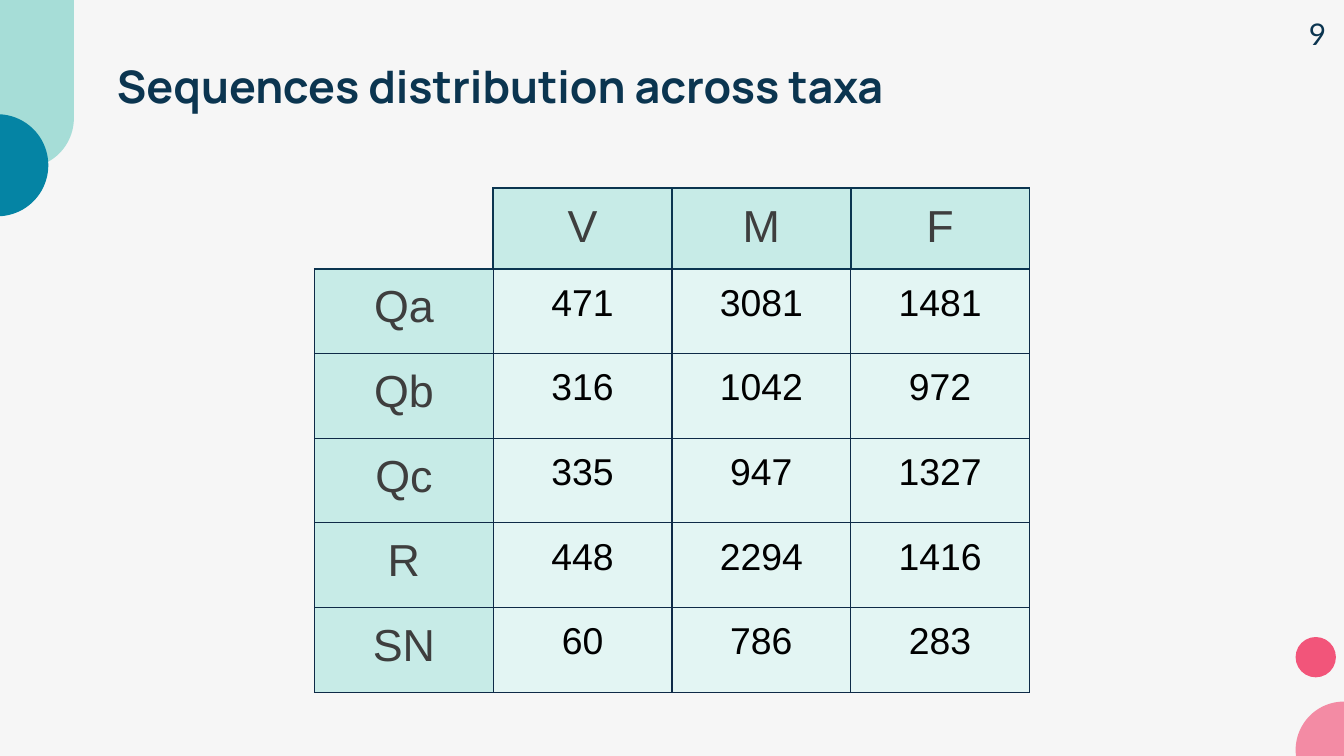
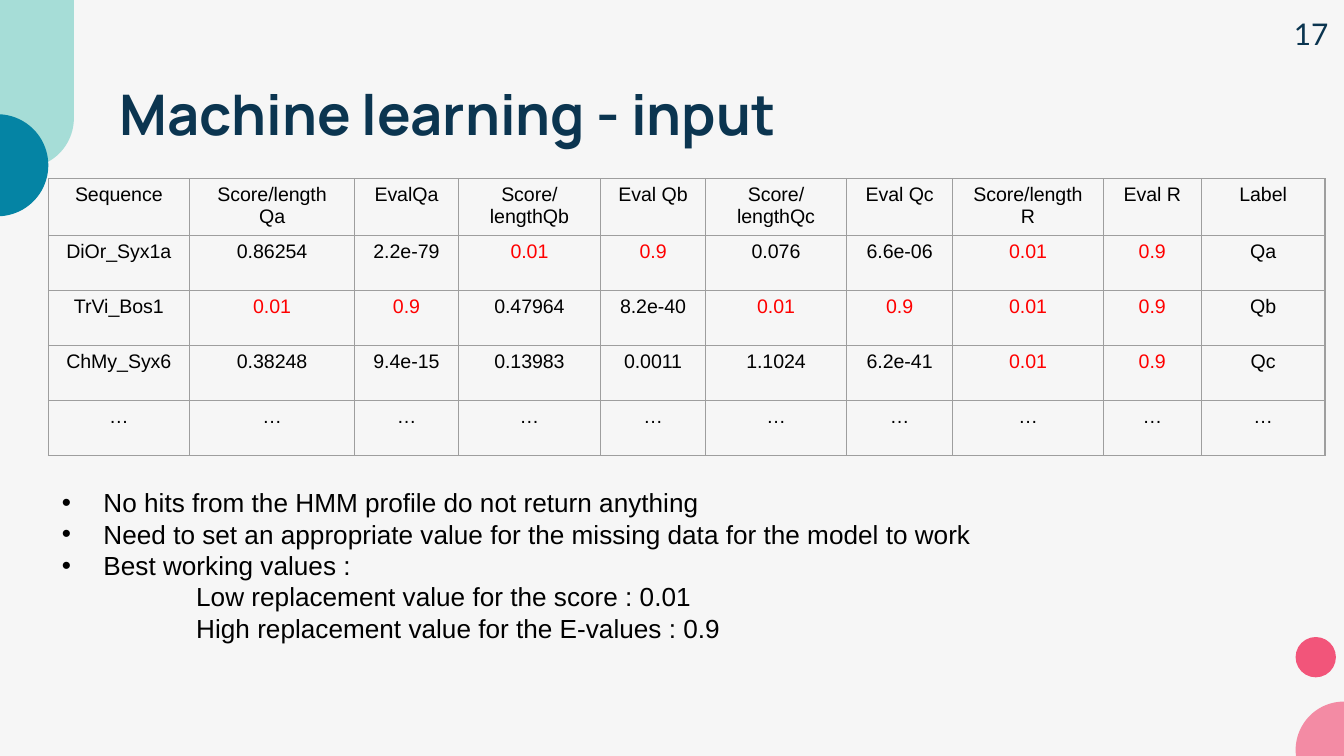
from dataclasses import dataclass
from typing import Optional

from lxml import etree
from pptx import Presentation
from pptx.dml.color import RGBColor
from pptx.enum.shapes import MSO_SHAPE
from pptx.enum.text import MSO_ANCHOR, MSO_AUTO_SIZE, PP_ALIGN
from pptx.oxml.ns import qn
from pptx.slide import Slide
from pptx.table import Table, _Cell
from pptx.text.text import _Paragraph
from pptx.util import Inches, Pt

ELLIPSE = MSO_SHAPE.OVAL
ROUNDED = MSO_SHAPE.ROUNDED_RECTANGLE
CHORD = MSO_SHAPE.CHORD
TOP = MSO_ANCHOR.TOP
LEFT = PP_ALIGN.LEFT
CENTER = PP_ALIGN.CENTER
NO_AUTOFIT = MSO_AUTO_SIZE.NONE
TITLE_AND_CONTENT, TITLE_ONLY = 1, 5
EDGES = ("lnL", "lnR", "lnT", "lnB")


@dataclass(frozen=True)
class Theme:
    background: str = "F6F6F6"
    navy: str = "0B3550"
    grid_navy: str = "0E2A47"
    grid_gray: str = "9E9E9E"
    mint: str = "74CEC4"
    teal: str = "0584A4"
    pink: str = "F2557A"
    header_fill: str = "C7EBE7"
    value_fill: str = "E3F5F3"
    header_text: str = "3E3E3E"
    black: str = "000000"
    red: str = "FF0000"
    title_font: str = "Manrope"
    body_font: str = "Arial"
    number_font: str = "Lato"
    small_title: float = 24
    large_title: float = 30
    taxa_header: float = 24
    taxa_value: float = 20
    input_cell: float = 10.5
    body: float = 14
    page_number: float = 16


THEME = Theme()


@dataclass(frozen=True)
class Box:
    left: float
    top: float
    width: float
    height: float

    def lengths(self) -> tuple:
        return tuple(Inches(v) for v in (self.left, self.top, self.width, self.height))


@dataclass(frozen=True)
class Decoration:
    kind: int
    box: Box
    color: str
    opacity: int = 100
    adjustments: tuple = ()


@dataclass(frozen=True)
class TextStyle:
    font: str
    size: float
    color: str
    bold: bool = False


@dataclass(frozen=True)
class Border:
    color: str
    width: float


@dataclass(frozen=True)
class Heading:
    text: str
    box: Box
    size: float
    top_inset: float


DECORATIONS = (
    Decoration(ELLIPSE, Box(9.64, 4.74, 0.3, 0.3), THEME.pink),
    Decoration(ROUNDED, Box(-0.19, -0.75, 0.74, 2), THEME.mint, 61, (0.5,)),
    Decoration(CHORD, Box(-0.4, 0.85, 0.76, 0.76), THEME.teal, 100, (162, 54)),
    Decoration(ELLIPSE, Box(9.64, 5.22, 0.72, 0.72), THEME.pink, 66),
)

TAXA_ROWS = (
    ("", "V", "M", "F"),
    ("Qa", "471", "3081", "1481"),
    ("Qb", "316", "1042", "972"),
    ("Qc", "335", "947", "1327"),
    ("R", "448", "2294", "1416"),
    ("SN", "60", "786", "283"),
)

MISSING_VALUES = ("0.01", "0.9")
INPUT_WIDTHS = (1.05, 1.23, 0.77, 1.06, 0.78, 1.05, 0.79, 1.12, 0.73, 0.92)
INPUT_ROWS = (
    ("Sequence", "Score/length Qa", "EvalQa", "Score/lengthQb", "Eval Qb",
     "Score/lengthQc", "Eval Qc", "Score/length R", "Eval R", "Label"),
    ("DiOr_Syx1a", "0.86254", "2.2e-79", "0.01", "0.9",
     "0.076", "6.6e-06", "0.01", "0.9", "Qa"),
    ("TrVi_Bos1", "0.01", "0.9", "0.47964", "8.2e-40",
     "0.01", "0.9", "0.01", "0.9", "Qb"),
    ("ChMy_Syx6", "0.38248", "9.4e-15", "0.13983", "0.0011",
     "1.1024", "6.2e-41", "0.01", "0.9", "Qc"),
    ("…",) * len(INPUT_WIDTHS),
)

FINDINGS = (
    "No hits from the HMM profile do not return anything",
    "Need to set an appropriate value for the missing data for the model to work",
    "Best working values :",
)
REPLACEMENTS = (
    "Low replacement value for the score : 0.01",
    "High replacement value for the E-values : 0.9",
)


def style_paragraph(paragraph: _Paragraph, style: TextStyle, alignment: int = LEFT) -> None:
    paragraph.alignment = alignment
    font = paragraph.font
    font.name = style.font
    font.size = Pt(style.size)
    font.bold = style.bold
    font.color.rgb = RGBColor.from_string(style.color)


def draw_decoration(slide: Slide, decoration: Decoration) -> None:
    shape = slide.shapes.add_shape(decoration.kind, *decoration.box.lengths())
    shape.shadow.inherit = False
    shape.line.fill.background()
    shape.fill.solid()
    shape.fill.fore_color.rgb = RGBColor.from_string(decoration.color)
    for index, value in enumerate(decoration.adjustments):
        shape.adjustments[index] = value
    if decoration.opacity < 100:
        color = shape.fill._xPr.find(f".//{qn('a:srgbClr')}")
        etree.SubElement(color, qn("a:alpha"), val=str(decoration.opacity * 1000))


def place(shape, box: Box) -> None:
    shape.left, shape.top, shape.width, shape.height = box.lengths()


def add_page(presentation, layout: int, heading: Heading, number: str, number_box: Box) -> Slide:
    slide = presentation.slides.add_slide(presentation.slide_layouts[layout])
    for decoration in DECORATIONS:
        draw_decoration(slide, decoration)

    title = slide.shapes.title
    place(title, heading.box)
    frame = title.text_frame
    frame.text = heading.text
    frame.auto_size = NO_AUTOFIT
    frame.vertical_anchor = TOP
    frame.margin_top = Inches(heading.top_inset)
    style_paragraph(frame.paragraphs[0],
                    TextStyle(THEME.title_font, heading.size, THEME.navy, True))

    number_frame = slide.shapes.add_textbox(*number_box.lengths()).text_frame
    number_frame.word_wrap = True
    number_frame.text = number
    style_paragraph(number_frame.paragraphs[0],
                    TextStyle(THEME.number_font, THEME.page_number, THEME.navy))
    return slide


def set_border(cell: _Cell, edge: str, border: Optional[Border]) -> None:
    properties = cell._tc.get_or_add_tcPr()
    line = etree.SubElement(properties, qn(f"a:{edge}"))
    if border is None:
        etree.SubElement(line, qn("a:noFill"))
        return
    line.set("w", str(Pt(border.width)))
    fill = etree.SubElement(line, qn("a:solidFill"))
    etree.SubElement(fill, qn("a:srgbClr"), val=border.color)


def format_cell(cell: _Cell, text: str, style: TextStyle, borders: dict,
                margins: tuple, fill: Optional[str] = None) -> None:
    cell.text = text
    cell.margin_top, cell.margin_bottom = (Inches(margin) for margin in margins)
    style_paragraph(cell.text_frame.paragraphs[0], style, CENTER)
    for edge in EDGES:
        set_border(cell, edge, borders[edge])
    if fill is None:
        cell.fill.background()
    else:
        cell.fill.solid()
        cell.fill.fore_color.rgb = RGBColor.from_string(fill)


def add_grid(slide: Slide, box: Box, widths: tuple, heights: tuple) -> Table:
    table = slide.shapes.add_table(len(heights), len(widths), *box.lengths()).table
    table.first_row = False
    table.horz_banding = False
    for column, width in zip(table.columns, widths):
        column.width = Inches(width)
    for row, height in zip(table.rows, heights):
        row.height = Inches(height)
    return table


def add_taxa_table(slide: Slide) -> None:
    thin = Border(THEME.grid_navy, 0.75)
    strong = Border(THEME.navy, 1)
    header = TextStyle(THEME.body_font, THEME.taxa_header, THEME.header_text)
    value = TextStyle(THEME.body_font, THEME.taxa_value, THEME.black)
    table = add_grid(slide, Box(2.34, 1.4, 5.32, 3.75), (1.33,) * 4, (0.59,) + (0.63,) * 5)
    for row, texts in enumerate(TAXA_ROWS):
        for column, text in enumerate(texts):
            is_corner = row == 0 and column == 0
            is_header = row == 0 or column == 0
            borders = dict.fromkeys(EDGES, strong if row == 0 else thin)
            if row == 1:
                borders["lnT"] = strong
            if is_corner:
                borders["lnL"] = borders["lnT"] = None
            fill = THEME.header_fill if is_header else THEME.value_fill
            format_cell(table.cell(row, column), text, header if is_header else value,
                        borders, (0.1, 0.1), None if is_corner else fill)


def add_input_table(slide: Slide) -> None:
    borders = dict.fromkeys(EDGES, Border(THEME.grid_gray, 0.75))
    table = add_grid(slide, Box(0.36, 1.33, 9.49, 2.07), INPUT_WIDTHS, (0.41,) * 5)
    for row, texts in enumerate(INPUT_ROWS):
        for column, text in enumerate(texts):
            color = THEME.red if text in MISSING_VALUES else THEME.black
            style = TextStyle(THEME.body_font, THEME.input_cell, color)
            format_cell(table.cell(row, column), text, style, borders, (0.04, 0.03))


def fill_findings(slide: Slide) -> None:
    body = slide.placeholders[1]
    place(body, Box(0.36, 3.57, 9.27, 1.28))
    frame = body.text_frame
    frame.auto_size = NO_AUTOFIT
    frame.text = "\n".join(FINDINGS + REPLACEMENTS)
    style = TextStyle(THEME.body_font, THEME.body, THEME.black)
    for index, paragraph in enumerate(frame.paragraphs):
        is_bullet = index < len(FINDINGS)
        properties = paragraph._p.get_or_add_pPr()
        properties.set("marL", str(Inches(0.31 if is_bullet else 1)))
        properties.set("indent", str(Inches(-0.31 if is_bullet else 0)))
        if not is_bullet:
            etree.SubElement(properties, qn("a:buNone"))
        paragraph.space_before = Pt(0)
        paragraph.line_spacing = 1.0
        style_paragraph(paragraph, style)


def main() -> None:
    presentation = Presentation()
    presentation.slide_width = Inches(10)
    presentation.slide_height = Inches(10) * 9 // 16
    background = presentation.slide_master.background.fill
    background.solid()
    background.fore_color.rgb = RGBColor.from_string(THEME.background)

    taxa_heading = Heading("Sequences distribution across taxa",
                           Box(0.77, 0.26, 8.46, 0.49), THEME.small_title, 0.18)
    taxa_slide = add_page(presentation, TITLE_ONLY, taxa_heading, "9",
                          Box(9.64, 0.07, 0.42, 0.37))
    add_taxa_table(taxa_slide)

    input_heading = Heading("Machine learning - input",
                            Box(0.79, 0.49, 8.43, 0.63), THEME.large_title, 0.1)
    input_slide = add_page(presentation, TITLE_AND_CONTENT, input_heading, "17",
                           Box(9.53, 0.07, 0.5, 0.37))
    add_input_table(input_slide)
    fill_findings(input_slide)

    presentation.save("out.pptx")


if __name__ == "__main__":
    main()
